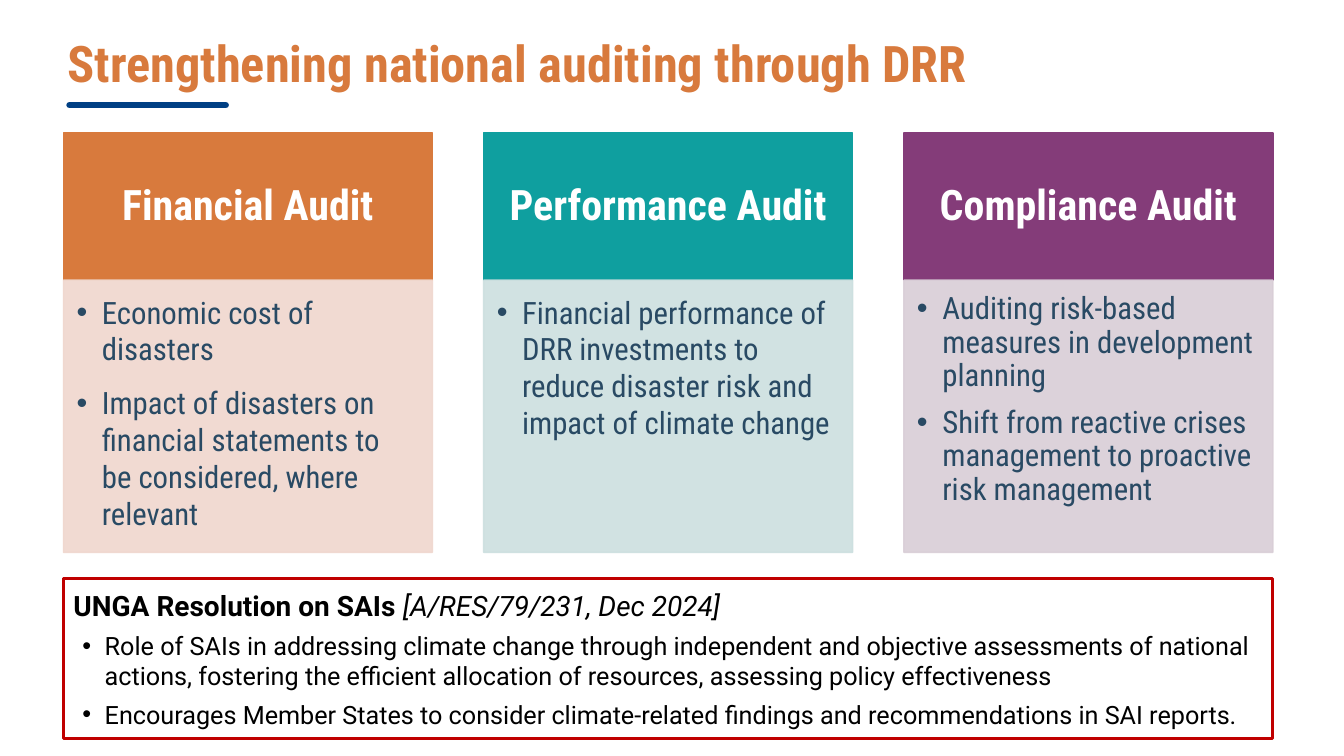
from lxml.etree import SubElement
from pptx import Presentation
from pptx.dml.color import RGBColor
from pptx.enum.shapes import MSO_CONNECTOR, MSO_SHAPE
from pptx.enum.text import MSO_ANCHOR as ANCHOR, PP_ALIGN as ALIGN
from pptx.oxml.ns import qn
from pptx.util import Cm, Pt

ORANGE = RGBColor(0xD8, 0x7A, 0x3D)
PALE_ORANGE = RGBColor(0xF0, 0xD7, 0xCE)
TEAL = RGBColor(0x0F, 0x9F, 0x9F)
PALE_TEAL = RGBColor(0xCC, 0xDF, 0xDF)
PURPLE = RGBColor(0x84, 0x3C, 0x79)
PALE_PURPLE = RGBColor(0xD9, 0xCE, 0xD7)
NAVY = RGBColor(0x00, 0x40, 0x84)
SLATE = RGBColor(0x29, 0x4A, 0x64)
RED = RGBColor(0xC0, 0x00, 0x00)
WHITE = RGBColor(0xFF, 0xFF, 0xFF)
BLACK = RGBColor(0x00, 0x00, 0x00)

CONDENSED = "Roboto Condensed"
REGULAR = "Roboto"

# Column heading, heading fill, body fill, line spacing, space after, points
AUDITS = [
    ("Financial Audit", ORANGE, PALE_ORANGE, 1.0, 12, [
        "Economic cost of disasters",
        "Impact of disasters on financial statements to be considered, where relevant"]),
    ("Performance Audit", TEAL, PALE_TEAL, 1.0, 12, [
        "Financial performance of DRR investments to reduce disaster risk "
        "and impact of climate change"]),
    ("Compliance Audit", PURPLE, PALE_PURPLE, 0.9, 10, [
        "Auditing risk-based measures in development planning",
        "Shift from reactive crises management to proactive risk management"]),
]
RESOLUTION_POINTS = [
    "Role of SAIs in addressing climate change through independent and objective "
    "assessments of national actions, fostering the efficient allocation of resources, "
    "assessing policy effectiveness",
    "Encourages Member States to consider climate-related findings and "
    "recommendations in SAI reports.",
]


def set_frame(frame, anchor, left, top, right, bottom):
    frame.word_wrap = True
    frame.vertical_anchor = anchor
    frame.margin_left, frame.margin_top = Cm(left), Cm(top)
    frame.margin_right, frame.margin_bottom = Cm(right), Cm(bottom)


def set_font(target, name, size, color, bold=False, italic=False):
    font = target.font
    font.name, font.size, font.bold, font.italic = name, Pt(size), bold, italic
    font.color.rgb = color


def set_bullet(paragraph, indent, hanging):
    properties = paragraph._p.get_or_add_pPr()
    properties.set("marL", str(Cm(indent)))
    properties.set("indent", str(-Cm(hanging)))
    SubElement(properties, qn("a:buFont")).set("typeface", "Arial")
    SubElement(properties, qn("a:buChar")).set("char", "•")


def add_panel(slide, left, top, width, height, fill, line, line_width, opacity=100):
    panel = slide.shapes.add_shape(
        MSO_SHAPE.RECTANGLE, Cm(left), Cm(top), Cm(width), Cm(height))
    panel.shadow.inherit = False
    panel.fill.solid()
    panel.fill.fore_color.rgb = fill
    panel.line.color.rgb = line
    panel.line.width = Pt(line_width)
    if opacity < 100:
        for color in panel._element.spPr.iter(qn("a:srgbClr")):
            SubElement(color, qn("a:alpha")).set("val", str(opacity * 1000))
    return panel


def add_title(slide, left, top, width, height):
    title = slide.shapes.add_textbox(Cm(left), Cm(top), Cm(width), Cm(height))
    set_frame(title.text_frame, ANCHOR.MIDDLE, 0, 0.15, 0.28, 0.15)
    title.text_frame.text = "Strengthening national auditing through DRR"
    set_font(title.text_frame.paragraphs[0].runs[0], CONDENSED, 36, ORANGE, bold=True)

    # Rounded underline
    line_y = Cm(top + height - 0.05)
    underline = slide.shapes.add_connector(
        MSO_CONNECTOR.STRAIGHT, Cm(left + 0.05), line_y, Cm(left + 3.99), line_y)
    underline.line.color.rgb = NAVY
    underline.line.width = Pt(4.5)
    underline.line._get_or_add_ln().set("cap", "rnd")
    SubElement(underline._element.spPr, qn("a:effectLst"))


def add_audit_column(slide, left, top, width, height, audit):
    heading, color, pale, spacing, space_after, points = audit
    header_height = 3.71

    # Heading
    header = add_panel(slide, left, top, width, header_height, color, color, 1)
    set_frame(header.text_frame, ANCHOR.MIDDLE, 0.58, 0.33, 0.58, 0.33)
    header.text_frame.text = heading
    paragraph = header.text_frame.paragraphs[0]
    paragraph.alignment = ALIGN.CENTER
    paragraph.line_spacing = 0.9
    set_font(paragraph.runs[0], CONDENSED, 30, WHITE, bold=True)

    # Points
    body = add_panel(slide, left, top + header_height, width, height - header_height,
                     pale, pale, 1, opacity=90)
    set_frame(body.text_frame, ANCHOR.TOP, 0.33, 0.33, 0.43, 0.48)
    body.text_frame.text = "\n".join(points)
    for paragraph in body.text_frame.paragraphs:
        paragraph.alignment = ALIGN.LEFT
        paragraph.line_spacing = spacing
        paragraph.space_after = Pt(space_after)
        set_bullet(paragraph, 0.64, 0.64)
        set_font(paragraph, CONDENSED, 22, SLATE)


def add_resolution(slide, left, top, width, height):
    box = add_panel(slide, left, top, width, height, WHITE, RED, 2.25)
    frame = box.text_frame
    set_frame(frame, ANCHOR.MIDDLE, 0.25, 0.13, 0.25, 0.13)

    # Resolution name and reference
    intro = frame.paragraphs[0]
    name, reference = intro.add_run(), intro.add_run()
    name.text = "UNGA Resolution on SAIs "
    reference.text = "[A/RES/79/231, Dec 2024]"
    set_font(name, REGULAR, 20, BLACK, bold=True)
    set_font(reference, REGULAR, 20, BLACK, italic=True)

    # Points
    for text in RESOLUTION_POINTS:
        point = frame.add_paragraph()
        point.text = text
        set_bullet(point, 0.79, 0.56)
        set_font(point, REGULAR, 18, BLACK)
    for paragraph in frame.paragraphs:
        paragraph.alignment = ALIGN.LEFT
        paragraph.space_after = Pt(6)


def main():
    deck = Presentation()
    deck.slide_width, deck.slide_height = Cm(33.87), Cm(19.05)
    slide = deck.slides.add_slide(deck.slide_layouts[6])

    margin, content_width, column_width = 1.6, 30.48, 9.3
    add_title(slide, 1.7, 0.46, content_width, 2.24)
    pitch = (content_width - column_width) / (len(AUDITS) - 1)
    for index, audit in enumerate(AUDITS):
        add_audit_column(slide, margin + index * pitch, 3.35, column_width, 10.57, audit)
    add_resolution(slide, margin, 14.58, content_width, 4.04)

    deck.save("out.pptx")


if __name__ == "__main__":
    main()
